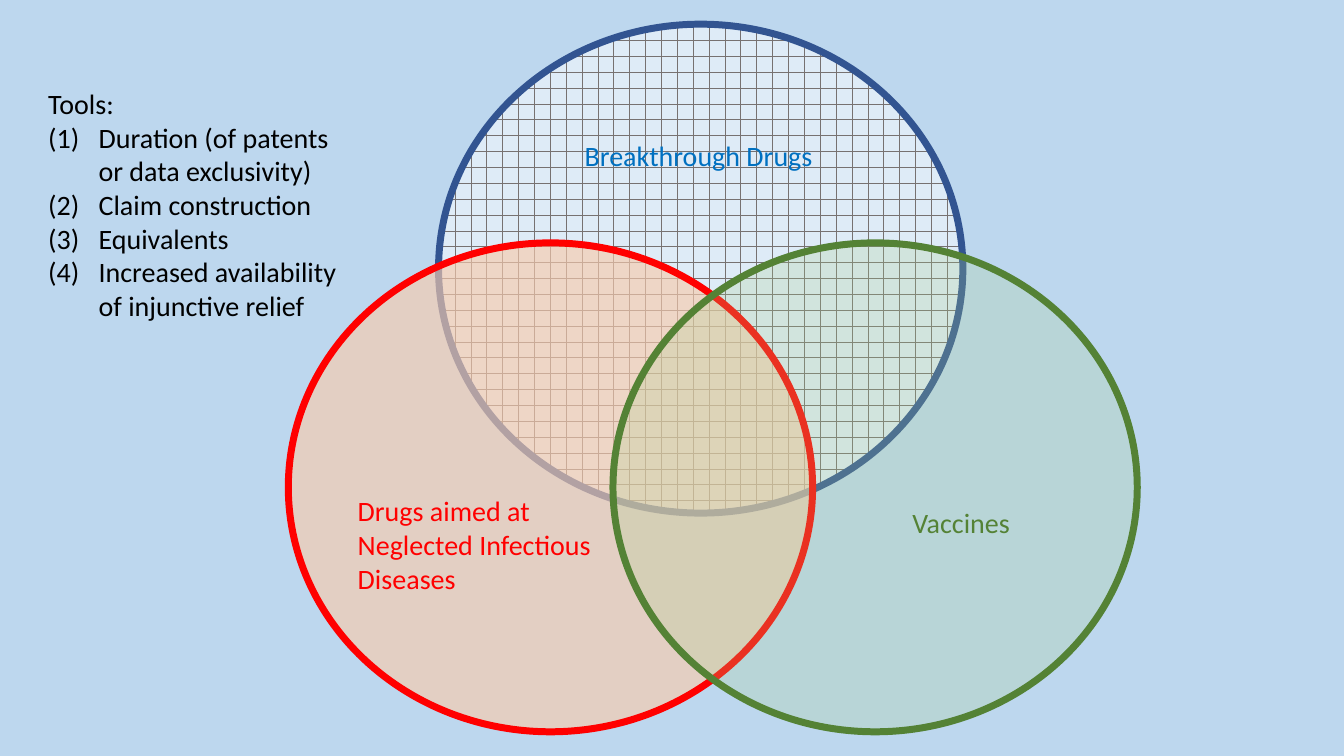
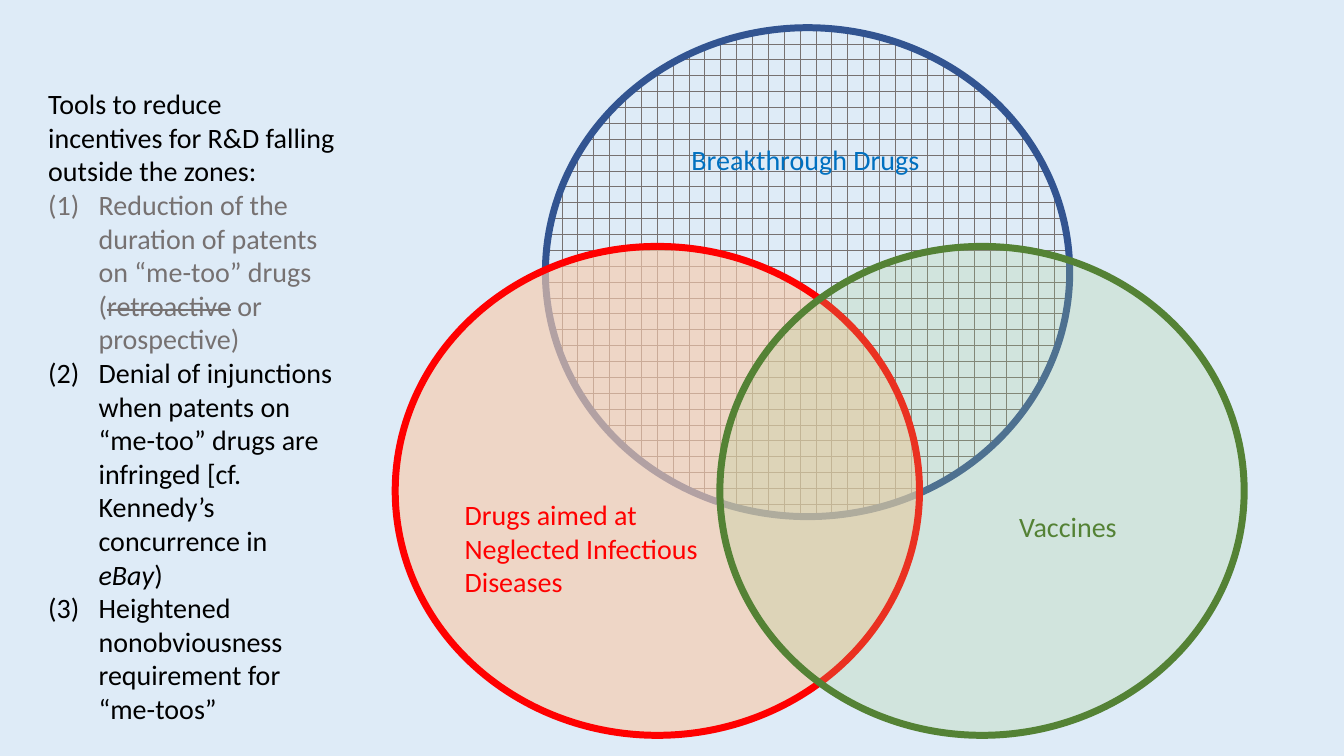
from pptx import Presentation
from pptx.dml.color import RGBColor
from pptx.enum import dml, shapes, text
from pptx.oxml.ns import qn
from pptx.util import Inches, Pt
from lxml import etree

HUES = {
    "sky": "BDD7EE", "pale": "DEEBF7", "gray": "767171", "black": "000000",
    "navy": "325491", "blue": "0070C0", "red": "FF0000", "peach": "F8CBAD",
    "green": "548235", "lime": "A9D18E",
}
HUES = {name: RGBColor.from_string(code) for name, code in HUES.items()}
WIDE, HIGH = 5.2, 4.85

# Left, top, fill, opacity (None for the grid pattern), line
RINGS = [
    (4.35, 0.24, "pale", None, "navy"),
    (2.86, 2.41, "peach", 65, "red"),
    (6.08, 2.41, "lime", 24, "green"),
]
# Left, top, width, height, wrap, colour, words
LABELS = [
    (5.7, 1.33, 2.48, 0.44, False, "blue", "Breakthrough Drugs"),
    (3.45, 4.85, 2.63, 1.11, True, "red",
     "Drugs aimed at Neglected Infectious Diseases"),
    (8.95, 4.97, 1.18, 0.44, False, "green", "Vaccines"),
]
# Each tool is a list of runs: words, colour, then an optional style
PAGES = [
    {"back": "sky", "shift": (0, 0), "high": 2.46, "tools": [
        [("Tools:", "black")],
        [("Duration (of patents or data exclusivity)", "black")],
        [("Claim construction", "black")],
        [("Equivalents", "black")],
        [("Increased availability of injunctive relief", "black")],
    ]},
    {"back": "pale", "shift": (1.06, 0.035), "high": 6.83, "tools": [
        [("Tools to reduce incentives for R&D falling outside the zones:",
          "black")],
        [("Reduction of the duration of patents on “me-too” drugs (", "gray"),
         ("retroactive", "gray", "strike"),
         (" or prospective)", "gray")],
        [("Denial of injunctions when patents on “me-too” drugs are infringed "
          "[cf. Kennedy’s concurrence in ", "black"),
         ("eBay", "black", "italic"),
         (")", "black")],
        [("Heightened nonobviousness requirement for “me-toos”", "black")],
    ]},
]


def write(slide, box, wrap, paras):
    """Add a text box; every paragraph after the first is numbered."""
    frame = slide.shapes.add_textbox(*map(Inches, box)).text_frame
    frame.word_wrap = wrap
    frame.auto_size = text.MSO_AUTO_SIZE.SHAPE_TO_FIT_TEXT
    for i, runs in enumerate(paras):
        para = frame.add_paragraph() if i else frame.paragraphs[0]
        if i:
            props = para._p.get_or_add_pPr()
            props.set("marL", str(Inches(0.5)))
            props.set("indent", str(-Inches(0.5)))
            etree.SubElement(props, qn("a:buFont"), typeface="+mj-lt")
            etree.SubElement(props, qn("a:buAutoNum"), type="arabicParenBoth")
        for words, hue, *style in runs:
            run = para.add_run()
            run.text = words
            form = {"name": "Calibri", "size": Pt(20)}
            if "italic" in style:
                form["italic"] = True
            for key, value in form.items():
                setattr(run.font, key, value)
            run.font.color.rgb = HUES[hue]
            if "strike" in style:
                run._r.get_or_add_rPr().set("strike", "sngStrike")


deck = Presentation()
deck.slide_width, deck.slide_height = Inches(13.33), Inches(7.5)

for page in PAGES:
    slide = deck.slides.add_slide(deck.slide_layouts[6])
    back = slide.background.fill
    back.solid()
    back.fore_color.rgb = HUES[page["back"]]
    dx, dy = page["shift"]

    for ring, label in zip(RINGS, LABELS):
        left, top, hue, alpha, edge = ring
        oval = slide.shapes.add_shape(
            shapes.MSO_SHAPE.OVAL, Inches(left + dx), Inches(top + dy),
            Inches(WIDE), Inches(HIGH))
        oval.shadow.inherit = False
        oval.line.color.rgb = HUES[edge]
        oval.line.width = Pt(5)
        if alpha is None:
            oval.fill.patterned()
            oval.fill.pattern = dml.MSO_PATTERN.DOTTED_GRID
            oval.fill.fore_color.rgb = HUES["gray"]
            oval.fill.back_color.rgb = HUES[hue]
        else:
            oval.fill.solid()
            oval.fill.fore_color.rgb = HUES[hue]
            color = oval._element.spPr.find(qn("a:solidFill"))[0]
            etree.SubElement(color, qn("a:alpha"), val=str(alpha * 1000))

        left, top, wide, high, wrap, hue, words = label
        write(slide, (left + dx, top + dy, wide, high), wrap, [[(words, hue)]])

    write(slide, (0.38, 0.81, 3.07, page["high"]), True, page["tools"])

deck.save("out.pptx")
